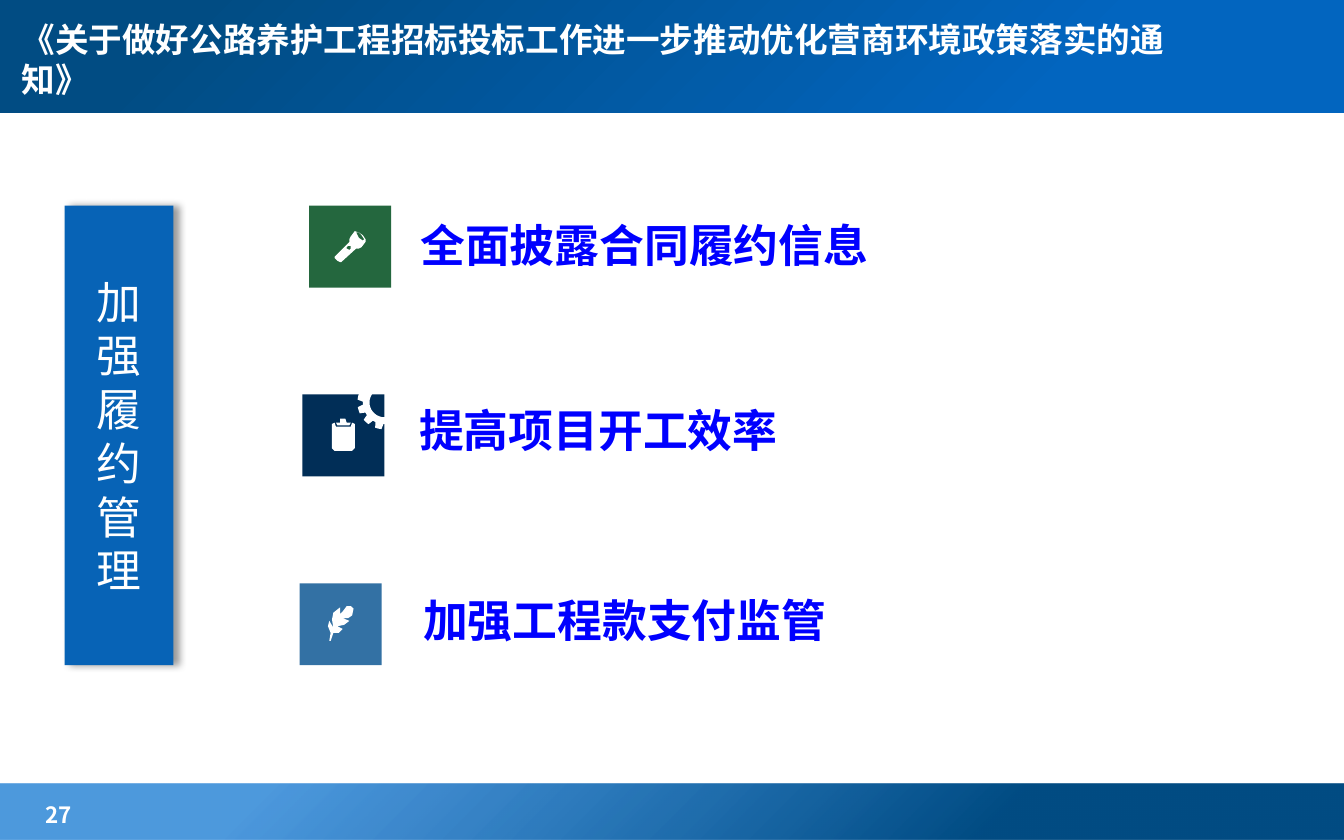
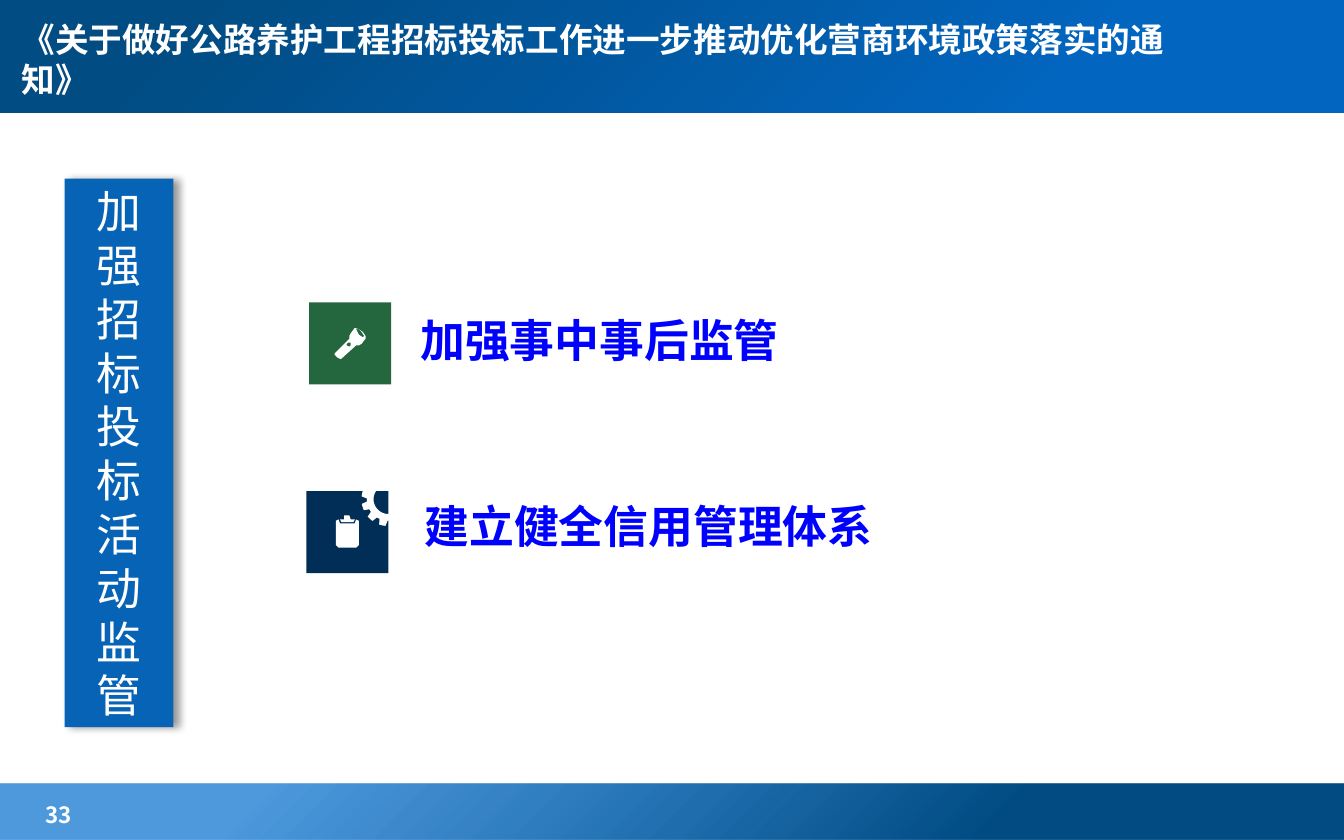
from dataclasses import dataclass
from math import cos, radians, sin

from lxml import etree
from pptx import Presentation
from pptx.dml.color import RGBColor
from pptx.enum.shapes import MSO_SHAPE
from pptx.enum.text import MSO_ANCHOR, MSO_AUTO_SIZE, PP_ALIGN
from pptx.oxml import parse_xml
from pptx.oxml.ns import nsdecls, qn
from pptx.util import Inches, Pt


@dataclass(frozen=True)
class Theme:
    white: str = "FFFFFF"
    label: str = "0000FF"
    side: str = "0763B6"
    green: str = "24673E"
    navy: str = "012E57"
    steel: str = "3371A4"
    # Gradient stops: position %, colour, opacity %
    header: tuple = ((21, "0265BF", 100), (86, "014C83", 100))
    footer: tuple = ((26, "014C83", 100), (80, "026DCE", 70))
    cjk: str = "Noto Sans CJK SC"
    title_font: str = "Times New Roman"
    label_font: str = "Arial"
    title_size: int = 18
    body_size: int = 24
    page_size: int = 12
    leading: float = 1.2


T = Theme()
W, H = 10, 6.25
TILE = 0.61
ROW_PITCH = 1.405
TITLE = "《关于做好公路养护工程招标投标工作进一步推动优化营商环境政策落实的通知》"


def gear(cx, cy, teeth=12):
    """Outlines of a toothed ring: the rim, then the hole."""
    profile = ((-11, 0.16), (-7, 0.2), (0, 0.2), (7, 0.2), (11, 0.16))
    rim = [(cx + r * cos(radians(a)), cy + r * sin(radians(a)))
           for k in range(teeth)
           for a, r in ((13 + k * 360 / teeth + da, r) for da, r in profile)]
    hole = [(cx + 0.11 * cos(radians(a)), cy + 0.11 * sin(radians(a)))
            for a in range(0, 360, 10)]
    return [rim, hole]


# Icon outlines, in inches from the corner of their tile
TORCH = [[
    [(.4, .22), (.37, .2), (.34, .19), (.31, .23), (.3, .25), (.3, .27),
     (.19, .38), (.19, .39), (.21, .41), (.23, .42), (.24, .42), (.35, .32),
     (.37, .32), (.39, .31), (.42, .27), (.42, .25)],
    [(.37, .24), (.35, .2), (.37, .2), (.39, .22), (.41, .25), (.4, .26)],
    [(.28, .32), (.28, .31), (.29, .3), (.31, .3), (.31, .32), (.3, .33)],
]]
CLIPBOARD = [
    [[(.37, .21), (.36, .24), (.25, .24), (.24, .21), (.22, .22), (.22, .4),
      (.24, .42), (.37, .42), (.39, .4), (.39, .22)]],
    [[(.35, .23), (.36, .21), (.33, .21), (.32, .18), (.28, .18), (.28, .21),
      (.25, .21), (.26, .23)]],
]
FEATHER = [[
    [(.23, .43), (.25, .37), (.29, .37), (.32, .34), (.28, .32), (.33, .31),
     (.37, .28), (.32, .26), (.36, .26), (.39, .24), (.4, .19), (.38, .17),
     (.35, .17), (.32, .21), (.3, .23), (.3, .18), (.25, .22), (.24, .27),
     (.25, .33), (.22, .28), (.21, .32), (.23, .37), (.22, .43)],
]]
GEAR = gear(0.61, 0.06)


@dataclass(frozen=True)
class Icon:
    color: str
    figures: list
    overlay: list = None


ICONS = {
    "torch": Icon(T.green, TORCH),
    "clipboard": Icon(T.navy, CLIPBOARD, GEAR),
    "feather": Icon(T.steel, FEATHER),
}


def rgb(color):
    return RGBColor.from_string(color)


def place(sp, x, y, w, h):
    sp.left, sp.top, sp.width, sp.height = (Inches(v) for v in (x, y, w, h))


def paint(sp, color):
    sp.shadow.inherit = False
    sp.fill.solid()
    sp.fill.fore_color.rgb = rgb(color)
    sp.line.fill.background()


def rect(shapes, x, y, w, h, color):
    sp = shapes.add_shape(MSO_SHAPE.RECTANGLE, *(Inches(v) for v in (x, y, w, h)))
    paint(sp, color)
    return sp


def set_text(sp, text, *, size, font=T.cjk, color=T.white, bold=False,
             align=PP_ALIGN.LEFT, anchor=MSO_ANCHOR.TOP):
    tf = sp.text_frame
    tf.word_wrap = True
    tf.auto_size = MSO_AUTO_SIZE.NONE
    tf.vertical_anchor = anchor
    p = tf.paragraphs[0]
    p.alignment = align
    p.line_spacing = Pt(size * T.leading)
    r = p.add_run()
    r.text = text
    r.font.name, r.font.size, r.font.bold = font, Pt(size), bold
    r.font.color.rgb = rgb(color)
    latin = r.font._element.find(qn("a:latin"))
    east_asian = etree.Element(qn("a:ea"), typeface=T.cjk)
    latin.addnext(east_asian)


def text_box(s, text, x, y, w, h, **fmt):
    set_text(s.shapes.add_textbox(*(Inches(v) for v in (x, y, w, h))), text, **fmt)


def set_radial(sp, stops):
    """Fill with a gradient that spreads from the lower right corner."""
    marks = "".join(
        f'<a:gs pos="{pos * 1000}"><a:srgbClr val="{color}">'
        f'<a:alpha val="{alpha * 1000}"/></a:srgbClr></a:gs>'
        for pos, color, alpha in stops)
    grad = parse_xml(
        f'<a:gradFill {nsdecls("a")} rotWithShape="1"><a:gsLst>{marks}</a:gsLst>'
        '<a:path path="circle"><a:fillToRect l="100000" t="100000"/></a:path>'
        '</a:gradFill>')
    props = sp._element.spPr
    props.replace(props.find(qn("a:solidFill")), grad)


def set_shadow(sp, blur=4, dist=3, alpha=40):
    effects = sp._element.spPr.find(qn("a:effectLst"))
    effects.append(parse_xml(
        f'<a:outerShdw {nsdecls("a")} blurRad="{Pt(blur)}" dist="{Pt(dist)}" '
        f'dir="0" algn="l" rotWithShape="0"><a:srgbClr val="000000">'
        f'<a:alpha val="{alpha * 1000}"/></a:srgbClr></a:outerShdw>'))


def outline(shapes, x, y, contours):
    """One white freeform; later contours cut holes in the first."""
    builder = None
    for contour in contours:
        pts = [(Inches(x + dx), Inches(y + dy)) for dx, dy in contour]
        if builder is None:
            builder = shapes.build_freeform(*pts[0], scale=1.0)
        else:
            builder.move_to(*pts[0])
        builder.add_line_segments(pts[1:], close=True)
    paint(builder.convert_to_shape(), T.white)


def icon_tile(s, icon, x, y):
    group = s.shapes.add_group_shape()
    rect(group.shapes, x, y, TILE, TILE, icon.color)
    for contours in icon.figures:
        outline(group.shapes, x, y, contours)
    if icon.overlay:
        outline(s.shapes, x, y, icon.overlay)


def add_bands(s):
    """Draw header and footer bands and move them to the shared layout."""
    for y, h, stops in ((5.83, 0.42, T.footer), (-0.03, 0.87, T.header)):
        band = rect(s.shapes, 0, y, W, h, T.white)
        set_radial(band, stops)
        s.slide_layout.shapes._spTree.append(band._element)


def side_bar(s, text, y, h):
    sp = rect(s.shapes, 0.48, y, 0.81, h, T.side)
    set_shadow(sp)
    set_text(sp, text, size=T.body_size, align=PP_ALIGN.CENTER,
             anchor=MSO_ANCHOR.MIDDLE)


def topic_slide(prs, page, topic, bar, first_row, items):
    """items: icon name, tile left, label left, label drop, label width, text."""
    s = prs.slides.add_slide(prs.slide_layouts[5])
    title = s.shapes.title
    place(title, 0.06, 0.12, 9.17, 0.64)
    set_text(title, TITLE, size=T.title_size, font=T.title_font, bold=True,
             anchor=MSO_ANCHOR.MIDDLE)
    text_box(s, f" {page}", 0.2, 5.91, 1.57, 0.26, size=T.page_size, bold=True)
    side_bar(s, topic, *bar)
    for row, (name, x, label_x, drop, width, text) in enumerate(items):
        y = first_row + row * ROW_PITCH
        icon_tile(s, ICONS[name], x, y)
        text_box(s, text, label_x, y + drop, width, 0.64, size=T.body_size,
                 font=T.label_font, color=T.label, bold=True)
    return s


def main():
    prs = Presentation()
    prs.slide_width, prs.slide_height = Inches(W), Inches(H)
    s = topic_slide(prs, 27, "加强履约管理", (1.53, 3.42), 1.53, [
        ("torch", 2.3, 3.03, 0.04, 6.14, "全面披露合同履约信息"),
        ("clipboard", 2.25, 3.02, 0.01, 3.15, "提高项目开工效率"),
        ("feather", 2.23, 3.05, 0.02, 3.74, "加强工程款支付监管"),
    ])
    add_bands(s)
    topic_slide(prs, 33, "加强招标投标活动监管", (1.33, 4.08), 2.25, [
        ("torch", 2.3, 3.03, 0.03, 6.14, "加强事中事后监管"),
        ("clipboard", 2.28, 3.06, 0.01, 4.05, "建立健全信用管理体系"),
    ])
    prs.save("out.pptx")


if __name__ == "__main__":
    main()
